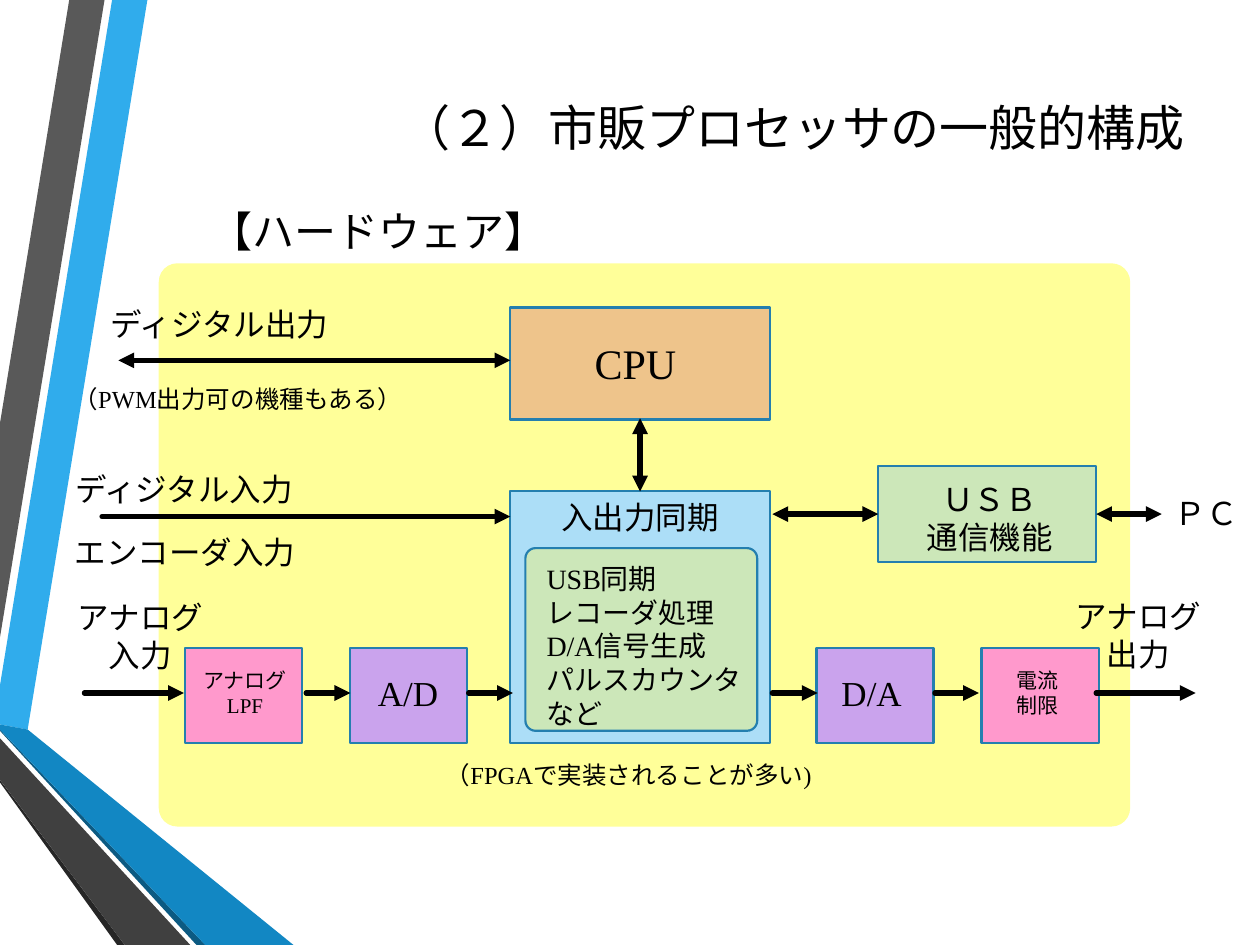
from lxml import etree
from pptx import Presentation
from pptx.dml.color import RGBColor
from pptx.enum import shapes, text
from pptx.oxml import ns
from pptx.util import Inches, Pt

prs = Presentation()
prs.slide_width, prs.slide_height = Inches(10), Inches(7.5)
s = prs.slides.add_slide(prs.slide_layouts[6])
LEFT, CENTER, RIGHT = text.PP_ALIGN.LEFT, text.PP_ALIGN.CENTER, text.PP_ALIGN.RIGHT
EDGE = "247FAF"


def rgb(value):
    return RGBColor.from_string(value)


def label(x, y, w, h, size, lines, align=CENTER, font="Times New Roman"):
    tf = s.shapes.add_textbox(Inches(x), Inches(y), Inches(w), Inches(h)).text_frame
    tf.word_wrap = True
    for i, line in enumerate(lines):
        p = tf.paragraphs[0] if i == 0 else tf.add_paragraph()
        p.alignment = align
        r = p.add_run()
        r.text = line
        r.font.size, r.font.name = Pt(size), font
        r.font.color.rgb = rgb("000000")
    return tf


# Ribbons at the left edge
ribbons = [
    ("30ACEC", [(0, 5.44), (0, 5.75), (0.22, 5.79), (1.17, 0), (0.89, 0)]),
    ("595959", [(0.83, 0), (0.55, 0), (0, 3.36), (0, 5.06)]),
    ("262626", [(0, 6.19), (0, 6.21), (0.93, 7.5), (0.99, 7.5)]),
    ("0C5A82", [(0, 5.79), (0, 5.8), (1.56, 7.5), (1.63, 7.5)]),
    ("1287C3", [(0, 5.79), (1.63, 7.5), (2.33, 7.5), (0.22, 5.79), (0, 5.75)]),
    ("404040", [(0, 6.19), (0.99, 7.5), (1.51, 7.5), (0, 5.86)]),
]
for color, points in ribbons:
    points = [(Inches(x), Inches(y)) for x, y in points]
    fb = s.shapes.build_freeform(*points[0])
    fb.add_line_segments(points[1:], close=True)
    sp = fb.convert_to_shape()
    sp.shadow.inherit = False
    sp.fill.solid()
    sp.fill.fore_color.rgb = rgb(color)
    sp.line.fill.background()

# Title and heading
tf = label(1.07, -0.08, 8.43, 2.17, 28, ["（２）市販プロセッサの一般的構成"], RIGHT, "Calibri")
tf.vertical_anchor = text.MSO_ANCHOR.MIDDLE
label(1.57, 1.58, 8.18, 0.5, 24, ["【ハードウェア】"], LEFT)

# Board and its blocks: x, y, w, h, fill, outline, corner radius
STAGE_Y, STAGE_W, STAGE_H = 5.14, 0.93, 0.76
blocks = [
    (1.26, 2.09, 7.71, 4.47, "FFFF99", None, 0.033),
    (4.05, 2.44, 2.06, 0.89, "EEC48B", EDGE, 0),
    (4.05, 3.9, 2.06, 2, "ACDEF7", EDGE, 0),
    (6.97, 3.7, 1.73, 0.76, "CCE7B9", EDGE, 0),
    (4.17, 4.35, 1.84, 1.45, "CCE7B9", EDGE, 0.056),
]
stages = [(1.47, "FF99CC"), (2.78, "CAA3ED"), (6.48, "CAA3ED"), (7.79, "FF99CC")]
blocks += [(x, STAGE_Y, STAGE_W, STAGE_H, color, EDGE, 0) for x, color in stages]
for x, y, w, h, color, edge, radius in blocks:
    kind = shapes.MSO_SHAPE.ROUNDED_RECTANGLE if radius else shapes.MSO_SHAPE.RECTANGLE
    sp = s.shapes.add_shape(kind, Inches(x), Inches(y), Inches(w), Inches(h))
    if radius:
        sp.adjustments[0] = radius
    sp.shadow.inherit = False
    sp.fill.solid()
    sp.fill.fore_color.rgb = rgb(color)
    if edge:
        sp.line.color.rgb = rgb(edge)
        sp.line.width = Pt(1.25)
    else:
        sp.line.fill.background()

# Signal arrows: start, tip, arrowhead at both ends
SIGNAL_Y = 5.5
arrows = [
    (0.94, 2.86, 4.05, 2.86, True),
    (5.08, 3.32, 5.08, 3.9, True),
    (6.13, 4.08, 6.97, 4.08, True),
    (8.7, 4.08, 9.22, 4.08, True),
    (0.81, 4.1, 4.05, 4.1, False),
]
hops = [(0.67, 1.46), (2.43, 2.78), (3.72, 4.07), (6.13, 6.49), (7.42, 7.77), (8.7, 9.49)]
arrows += [(x1, SIGNAL_Y, x2, SIGNAL_Y, False) for x1, x2 in hops]
for x1, y1, x2, y2, both in arrows:
    cn = s.shapes.add_connector(shapes.MSO_CONNECTOR.STRAIGHT,
                                Inches(x1), Inches(y1), Inches(x2), Inches(y2))
    cn.line.color.rgb = rgb("000000")
    cn.line.width = Pt(3)
    ln = cn.line._get_or_add_ln()
    ln.set("cap", "rnd")
    for end in ["headEnd", "tailEnd"] if both else ["tailEnd"]:
        etree.SubElement(ln, ns.qn("a:" + end), type="triangle")
    etree.SubElement(cn._element.spPr, ns.qn("a:effectLst"))

# Block names
label(4.62, 2.63, 0.91, 0.5, 24, ["CPU"], LEFT)
label(4.05, 3.9, 2.06, 0.4, 18, ["入出力同期"])
label(4.24, 4.41, 1.8, 1.45, 16,
      ["USB同期", "レコーダ処理", "D/A信号生成", "パルスカウンタ", "など"], LEFT)
label(7.14, 3.76, 1.43, 0.71, 18, ["ＵＳＢ", "通信機能"])
label(1.47, 5.25, 0.95, 0.5, 12, ["アナログLPF"])
label(2.9, 5.28, 0.69, 0.44, 20, ["A/D"], LEFT)
label(6.58, 5.28, 0.69, 0.44, 20, ["D/A"], LEFT)
label(7.87, 5.25, 0.73, 0.5, 12, ["電流", "制限"])

# Signal names and remarks
label(0.63, 2.37, 2.22, 0.4, 18, ["ディジタル出力"])
label(0.44, 3, 2.9, 0.57, 14, ["（PWM出力可の機種もある）"])
label(0.35, 3.68, 2.22, 0.4, 18, ["ディジタル入力"])
label(0.36, 4.18, 2.22, 0.4, 18, ["エンコーダ入力"])
label(0.45, 4.7, 1.33, 0.71, 18, ["アナログ", "入力"])
label(8.37, 4.69, 1.33, 0.71, 18, ["アナログ", "出力"])
label(9.22, 3.87, 0.71, 0.4, 18, ["ＰＣ"])
label(3.44, 5.98, 3.11, 0.57, 14, ["（FPGAで実装されることが多い)"], LEFT)

prs.save("out.pptx")
